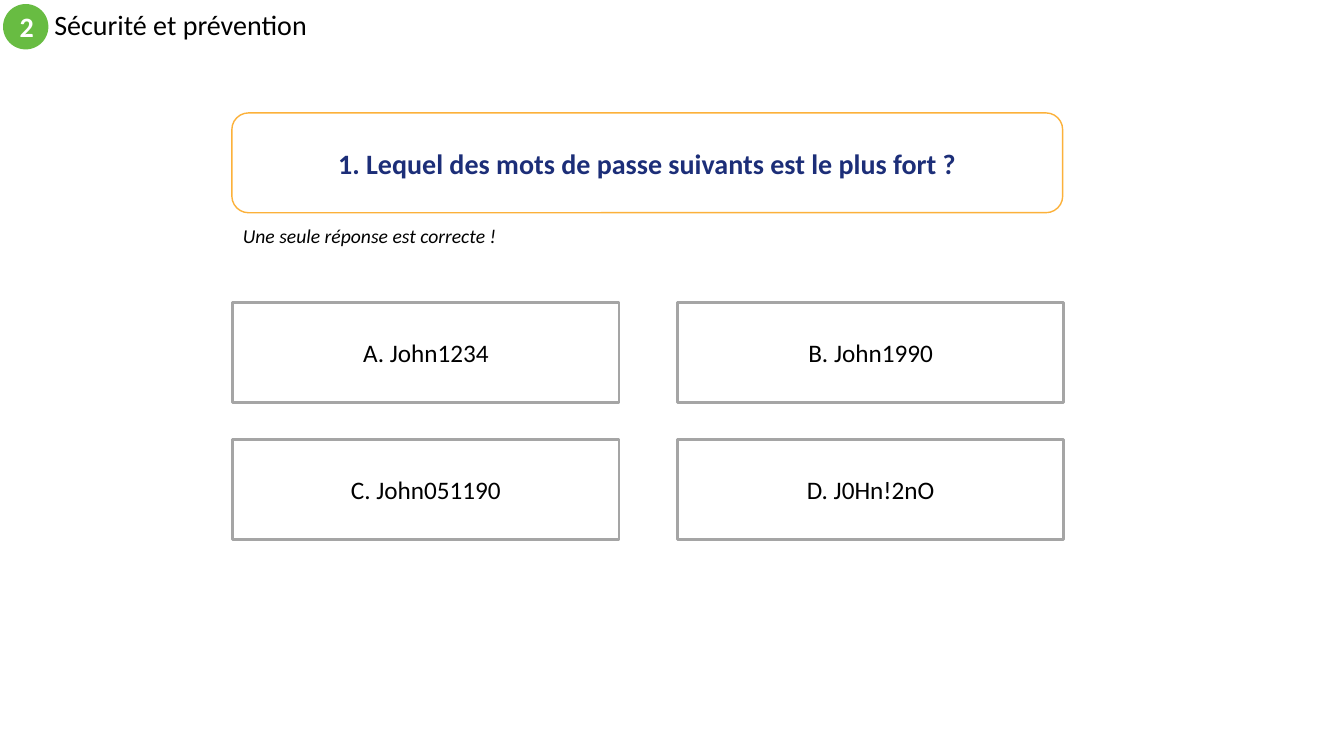
from pptx import Presentation
from pptx import util as u
from pptx.dml.color import RGBColor
from pptx.enum import shapes, text

COLORS = {
    "white": "FFFFFF",
    "black": "000000",
    "green": "68BC42",
    "orange": "FCB13A",
    "navy": "1C2E78",
    "gray": "A5A5A5",
}
ANSWERS = ["A. John1234", "B. John1990", "C. John051190", "D. J0Hn!2nO"]


class QuizSlide:
    font_name = "Calibri"

    def __init__(self, presentation):
        self.slide = presentation.slides.add_slide(presentation.slide_layouts[6])

    def color(self, name):
        return RGBColor.from_string(COLORS[name])

    def set_text(self, shape, words, color, align, frame_format=None, spacing=None, **font_format):
        frame = shape.text_frame
        frame_values = {"word_wrap": True, "vertical_anchor": text.MSO_ANCHOR.MIDDLE}
        for name, value in (frame_values | (frame_format or {})).items():
            setattr(frame, name, value)
        paragraph = frame.paragraphs[0]
        paragraph.text = words
        paragraph.alignment = align
        if spacing:
            paragraph.line_spacing = spacing
        font = paragraph.runs[0].font
        for name, value in ({"name": self.font_name} | font_format).items():
            setattr(font, name, value)
        font.color.rgb = self.color(color)

    def box(self, kind, place, words, color, fill="white", line=None, width=1, **font_format):
        shape = self.slide.shapes.add_shape(kind, *map(u.Inches, place))
        shape.shadow.inherit = False
        shape.fill.solid()
        shape.fill.fore_color.rgb = self.color(fill)
        if line:
            shape.line.color.rgb = self.color(line)
            shape.line.width = u.Pt(width)
        else:
            shape.line.fill.background()
        self.set_text(shape, words, color, text.PP_ALIGN.CENTER, **font_format)

    def label(self, place, words, **formats):
        shape = self.slide.shapes.add_textbox(*map(u.Inches, place))
        self.set_text(shape, words, "black", text.PP_ALIGN.LEFT, **formats)


def main():
    presentation = Presentation()
    presentation.slide_width = u.Inches(13.33)
    presentation.slide_height = u.Inches(7.5)
    quiz = QuizSlide(presentation)
    kinds = shapes.MSO_SHAPE

    quiz.box(kinds.OVAL, (0.03, 0.04, 0.45, 0.45), "2", "white",
             fill="green", size=u.Pt(20), bold=True)
    quiz.label((0.44, 0.04, 8, 0.45), "Sécurité et prévention", spacing=0.9, size=u.Pt(20))
    quiz.box(kinds.ROUNDED_RECTANGLE, (2.3, 1.12, 8.24, 0.99),
             "1. Lequel des mots de passe suivants est le plus fort ?", "navy",
             line="orange", size=u.Pt(20), bold=True)
    quiz.label((2.31, 2.17, 3.59, 0.34), "Une seule réponse est correcte !",
               frame_format={"vertical_anchor": text.MSO_ANCHOR.TOP,
                             "auto_size": text.MSO_AUTO_SIZE.SHAPE_TO_FIT_TEXT},
               size=u.Pt(14), italic=True)

    for index, answer in enumerate(ANSWERS):
        row, column = divmod(index, 2)
        quiz.box(kinds.RECTANGLE, (2.31 + 4.41 * column, 3 + 1.36 * row, 3.83, 0.99),
                 answer, "black", line="gray", width=2, size=u.Pt(18))

    presentation.save("out.pptx")


if __name__ == "__main__":
    main()
